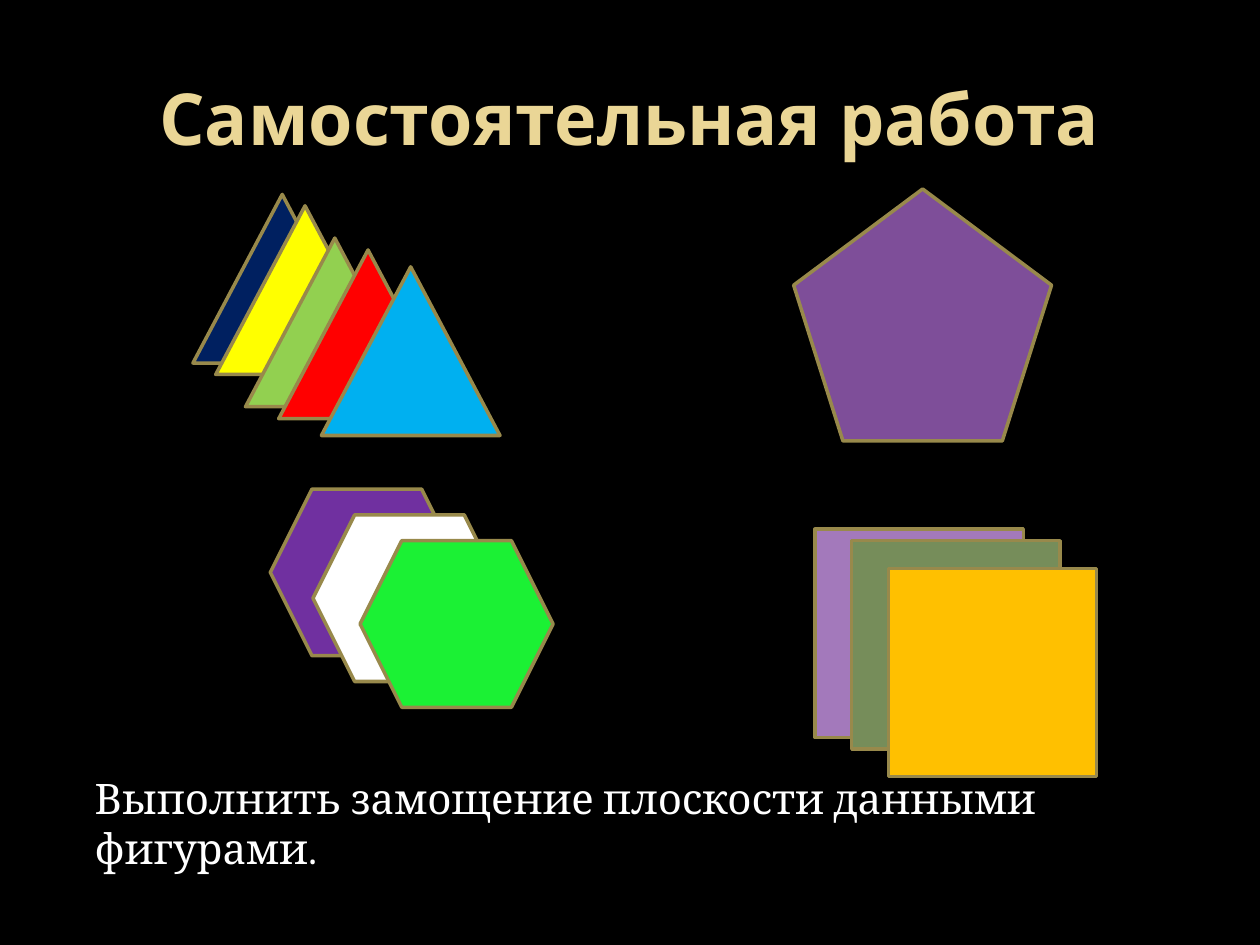
from pptx import Presentation
from pptx.dml.color import RGBColor
from pptx.enum.shapes import MSO_SHAPE
from pptx.enum.text import MSO_ANCHOR, PP_ALIGN
from pptx.util import Cm, Pt

TRIANGLE = MSO_SHAPE.ISOSCELES_TRIANGLE
PENTAGON = MSO_SHAPE.REGULAR_PENTAGON
HEXAGON = MSO_SHAPE.HEXAGON
SQUARE = MSO_SHAPE.RECTANGLE
LEFT, CENTER = PP_ALIGN.LEFT, PP_ALIGN.CENTER
TOP, MIDDLE = MSO_ANCHOR.TOP, MSO_ANCHOR.MIDDLE

BACKGROUND = "000000"
OUTLINE = "98894B"
TITLE = "Самостоятельная работа"
TASK = "Выполнить замощение плоскости данными фигурами."

STACKS = [
    (TRIANGLE, 3.6, 3.4, [
        (3.89, 3.92, "002060"),
        (4.35, 4.15, "FFFF00"),
        (4.95, 4.8, "92D050"),
        (5.62, 5.04, "FF0000"),
        (6.48, 5.38, "00B0F0"),
    ]),
    (PENTAGON, 5.2, 5.08, [(16, 3.81, "7E4E99")]),
    (HEXAGON, 3.89, 3.36, [
        (5.45, 9.86, "7030A0"),
        (6.31, 10.38, "FFFFFF"),
        (7.26, 10.9, "1BF134"),
    ]),
    (SQUARE, 4.2, 4.2, [
        (16.43, 10.67, "A379BB"),
        (17.17, 10.9, "768D5A"),
        (17.91, 11.46, "FFC000"),
    ]),
]


def color(value):
    return RGBColor.from_string(value)


def add_text(slide, text, left, top, width, height, *, font, size, fill,
             bold=False, align=LEFT, anchor=TOP, inset=0.25):
    box = slide.shapes.add_textbox(Cm(left), Cm(top), Cm(width), Cm(height))
    frame = box.text_frame
    frame.word_wrap = True
    frame.vertical_anchor = anchor
    frame.margin_left = Cm(inset)
    paragraph = frame.paragraphs[0]
    paragraph.alignment = align
    run = paragraph.add_run()
    run.text = text
    run.font.name = font
    run.font.size = Pt(size)
    run.font.bold = bold
    run.font.color.rgb = color(fill)


def add_figure(slide, kind, left, top, width, height, fill):
    shape = slide.shapes.add_shape(kind, Cm(left), Cm(top), Cm(width), Cm(height))
    shape.shadow.inherit = False
    shape.fill.solid()
    shape.fill.fore_color.rgb = color(fill)
    shape.line.color.rgb = color(OUTLINE)
    shape.line.width = Pt(2)


def main():
    presentation = Presentation()
    presentation.slide_width = Cm(25.4)
    presentation.slide_height = Cm(19.05)
    slide = presentation.slides.add_slide(presentation.slide_layouts[6])
    slide.background.fill.solid()
    slide.background.fill.fore_color.rgb = color(BACKGROUND)

    add_text(slide, TITLE, 1.27, 0.76, 22.86, 3.18, font="Open Sans", size=41,
             fill="EAD696", bold=True, align=CENTER, anchor=MIDDLE)
    for kind, width, height, figures in STACKS:
        for left, top, fill in figures:
            add_figure(slide, kind, left, top, width, height, fill)
    add_text(slide, TASK, 1.27, 15.45, 22.86, 2.08, font="Cambria", size=24,
             fill="FFFFFF", inset=0.64)

    presentation.save("out.pptx")


if __name__ == "__main__":
    main()
